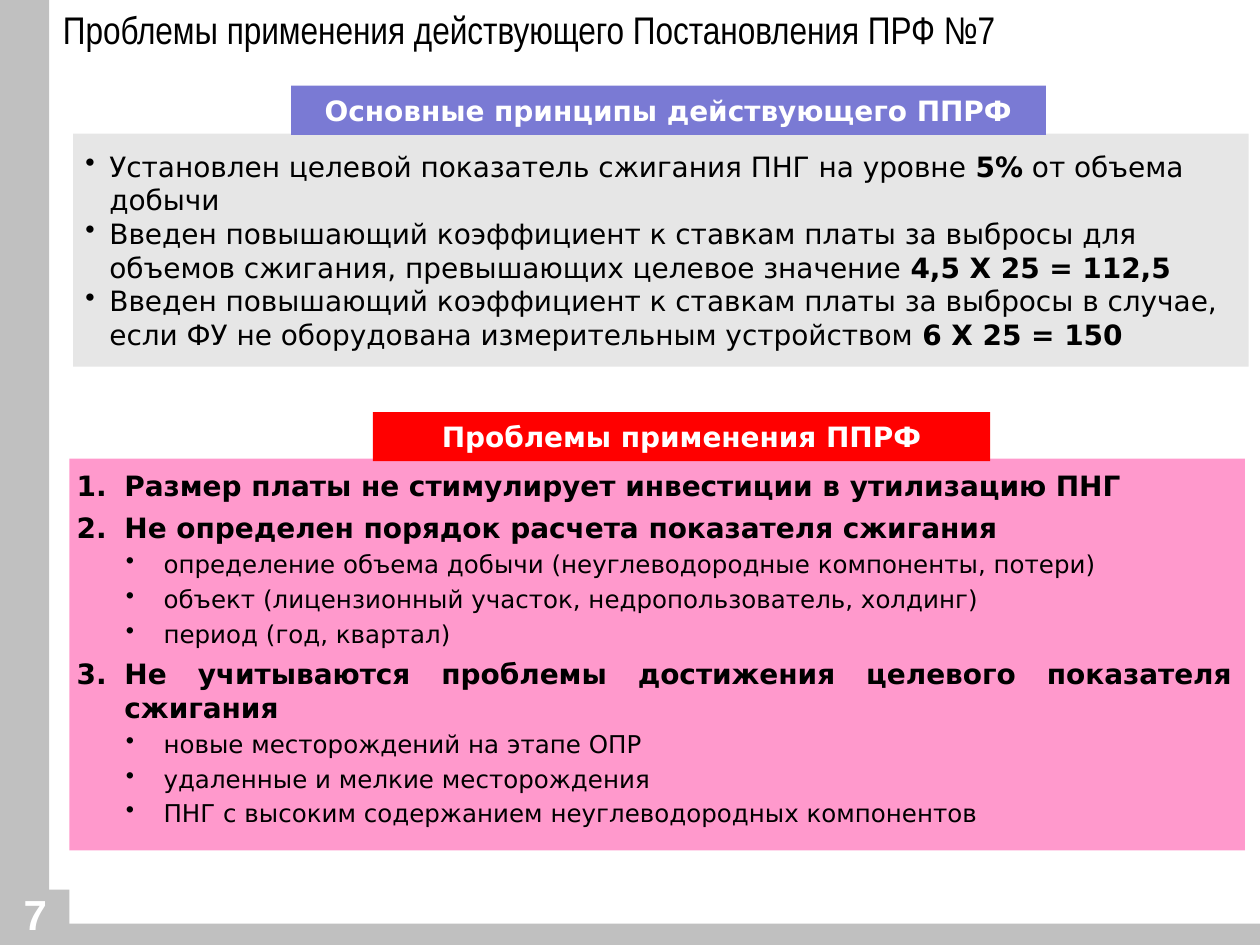
from dataclasses import dataclass

from lxml import etree
from pptx import Presentation
from pptx.dml.color import RGBColor
from pptx.enum.shapes import MSO_SHAPE
from pptx.enum.text import MSO_ANCHOR, PP_ALIGN
from pptx.oxml.ns import qn
from pptx.util import Inches, Pt

RECTANGLE = MSO_SHAPE.RECTANGLE
TOP, MIDDLE = MSO_ANCHOR.TOP, MSO_ANCHOR.MIDDLE
LEFT, CENTER, JUSTIFY = PP_ALIGN.LEFT, PP_ALIGN.CENTER, PP_ALIGN.JUSTIFY

COLORS = {
    "frame": "C0C0C0",
    "principles_header": "7A7AD4",
    "principles_body": "E6E6E6",
    "problems_header": "FF0000",
    "problems_body": "FF99CC",
    "dark": "000000",
    "light": "FFFFFF",
}
BODY_FONT = "DejaVu Sans"


@dataclass(frozen=True)
class Box:
    left: float
    top: float
    width: float
    height: float

    def emu(self):
        return [Inches(v) for v in (self.left, self.top, self.width, self.height)]


@dataclass(frozen=True)
class Principle:
    lead: str
    figure: str
    tail: str = ""


@dataclass(frozen=True)
class Problem:
    title: str
    details: tuple[str, ...] = ()


FRAME = (Box(0, 0, 0.39, 7.1), Box(0, 7.06, 0.55, 0.32), Box(0, 7.33, 10, 0.17))

PRINCIPLES = (
    Principle("Установлен целевой показатель сжигания ПНГ на уровне ", "5%",
              " от объема добычи"),
    Principle("Введен повышающий коэффициент к ставкам платы за выбросы для объемов "
              "сжигания, превышающих целевое значение ", "4,5 Х 25 = 112,5"),
    Principle("Введен повышающий коэффициент к ставкам платы за выбросы в случае, если "
              "ФУ не оборудована измерительным устройством ", "6 Х 25 = 150"),
)

PROBLEMS = (
    Problem("Размер платы не стимулирует инвестиции в утилизацию ПНГ"),
    Problem("Не определен порядок расчета показателя сжигания", (
        "определение объема добычи (неуглеводородные компоненты, потери)",
        "объект (лицензионный участок, недропользователь, холдинг)",
        "период (год, квартал)",
    )),
    Problem("Не учитываются проблемы достижения целевого показателя сжигания", (
        "новые месторождений на этапе ОПР",
        "удаленные и мелкие месторождения",
        "ПНГ с высоким содержанием неуглеводородных компонентов",
    )),
)


def set_font(paragraph, size: float, color: str = "dark", bold: bool = False,
             name: str = BODY_FONT) -> None:
    font = paragraph.font
    font.name, font.size, font.bold = name, Pt(size), bold
    font.color.rgb = RGBColor.from_string(COLORS[color])


def add_panel(slide, box: Box, color: str):
    panel = slide.shapes.add_shape(RECTANGLE, *box.emu())
    panel.shadow.inherit = False
    panel.fill.solid()
    panel.fill.fore_color.rgb = RGBColor.from_string(COLORS[color])
    panel.line.fill.background()
    return panel


def add_text_frame(slide, box: Box, anchor=TOP):
    frame = slide.shapes.add_textbox(*box.emu()).text_frame
    frame.word_wrap = True
    frame.vertical_anchor = anchor
    return frame


def add_header(slide, box: Box, text: str, color: str) -> None:
    paragraph = add_panel(slide, box, color).text_frame.paragraphs[0]
    paragraph.text = text
    paragraph.alignment = CENTER
    set_font(paragraph, 16, "light", bold=True)


def set_list_marker(paragraph, margin: float, hanging: float, number: int = 0) -> None:
    """Hang the paragraph on its number, or on a bullet when there is none."""
    props = paragraph._p.get_or_add_pPr()
    props.set("marL", str(Inches(margin)))
    props.set("indent", str(-Inches(hanging)))
    if number:
        marker = etree.Element(qn("a:buAutoNum"), type="arabicPeriod", startAt=str(number))
    else:
        marker = etree.Element(qn("a:buChar"), char="•")
    props.insert_element_before(marker, "a:tabLst", "a:defRPr", "a:extLst")


def next_paragraph(frame):
    """Return the empty first paragraph of a frame, later a new one."""
    first = frame.paragraphs[0]
    return frame.add_paragraph() if first.runs else first


def add_principles(slide, box: Box) -> None:
    frame = add_panel(slide, box, "principles_body").text_frame
    for principle in PRINCIPLES:
        paragraph = next_paragraph(frame)
        paragraph.alignment = LEFT
        set_font(paragraph, 16)
        set_list_marker(paragraph, 0.19, 0.19)
        paragraph.add_run().text = principle.lead
        figure = paragraph.add_run()
        figure.text = principle.figure
        figure.font.bold = True
        if principle.tail:
            paragraph.add_run().text = principle.tail


def add_problem_line(frame, text: str, number: int = 0) -> None:
    """Add a numbered bold problem, or a bulleted detail when there is no number."""
    paragraph = next_paragraph(frame)
    paragraph.text = text
    paragraph.alignment = JUSTIFY
    if number:
        paragraph.space_before = Pt(4.8)
        set_font(paragraph, 16, bold=True)
        set_list_marker(paragraph, 0.38, 0.38, number)
    else:
        paragraph.level = 1
        paragraph.space_before = Pt(3)
        set_font(paragraph, 14)
        set_list_marker(paragraph, 0.69, 0.3)


def add_problems(slide) -> None:
    add_panel(slide, Box(0.55, 3.64, 9.33, 3.11), "problems_body")
    frame = add_text_frame(slide, Box(0.51, 3.67, 9.37, 3.07))
    for number, problem in enumerate(PROBLEMS, start=1):
        add_problem_line(frame, problem.title, number)
        for detail in problem.details:
            add_problem_line(frame, detail)


def add_title(slide, text: str) -> None:
    frame = add_text_frame(slide, Box(0.5, 0.09, 9, 0.33), MIDDLE)
    frame.margin_left = frame.margin_right = frame.margin_top = frame.margin_bottom = 0
    title = frame.paragraphs[0]
    title.text = text
    title.line_spacing = 0.9
    set_font(title, 22, name="Arial Narrow")


def add_page_number(slide, text: str) -> None:
    number = add_text_frame(slide, Box(-0.25, 7, 1.06, 0.57)).paragraphs[0]
    number.text = text
    number.alignment = CENTER
    set_font(number, 24, "light", bold=True, name="Arial")


def main() -> None:
    deck = Presentation()
    deck.slide_width, deck.slide_height = Inches(10), Inches(7.5)
    slide = deck.slides.add_slide(deck.slide_layouts[6])

    for bar in FRAME:
        add_panel(slide, bar, "frame")
    add_page_number(slide, "7")
    add_title(slide, "Проблемы применения действующего Постановления ПРФ №7")

    add_problems(slide)
    add_header(slide, Box(2.96, 3.27, 4.9, 0.39), "Проблемы применения ППРФ",
               "problems_header")
    add_principles(slide, Box(0.58, 1.06, 9.33, 1.85))
    add_header(slide, Box(2.31, 0.68, 5.99, 0.39), "Основные принципы действующего ППРФ",
               "principles_header")

    deck.save("out.pptx")


if __name__ == "__main__":
    main()
